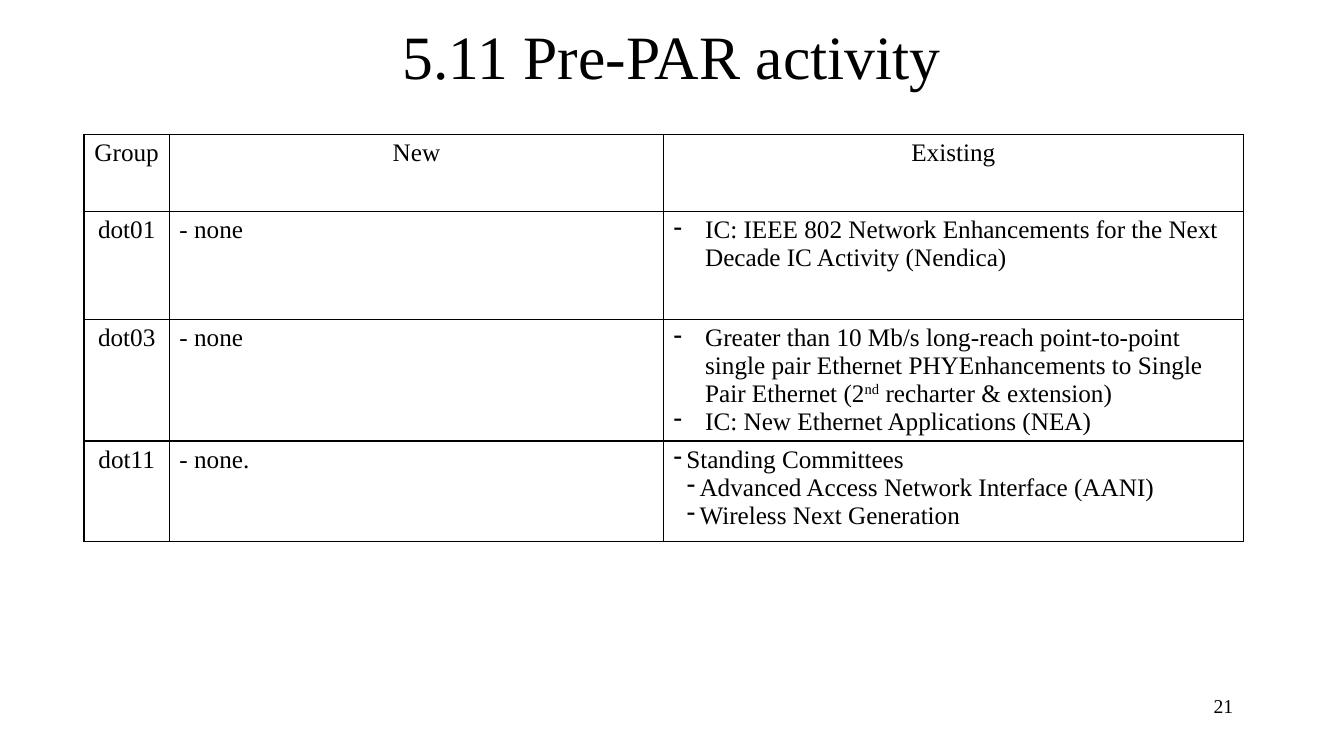
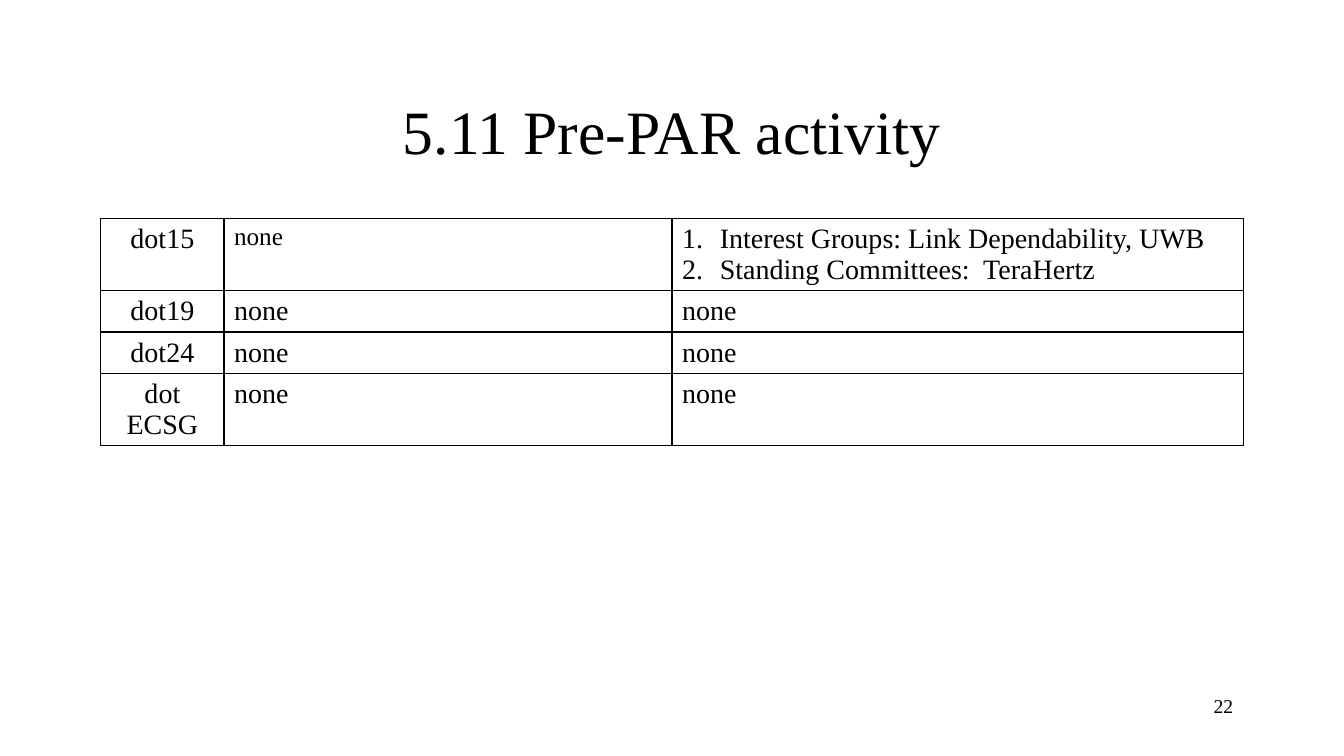
"""Build two slides that list pre-PAR activity by group in bordered tables."""
from lxml import etree
from pptx import Presentation
from pptx.dml.color import RGBColor
from pptx.enum.text import MSO_ANCHOR, PP_ALIGN
from pptx.oxml.ns import qn
from pptx.util import Pt

CENTER, LEFT, RIGHT = PP_ALIGN.CENTER, PP_ALIGN.LEFT, PP_ALIGN.RIGHT
MIDDLE = MSO_ANCHOR.MIDDLE
BLACK = RGBColor(0, 0, 0)
FONT = "Times New Roman"
TITLE_ONLY = 5
TITLE = "5.11 Pre-PAR activity"
TITLE_SIZE, NUMBER_SIZE = 44, 14
NUMBER_BOX = (688, 492, 200, 36)
BORDER_WIDTH = 1

# style name: (level, indent, bullet tag, bullet attributes)
LIST_STYLES = {
    "dash": (0, 22.5, "a:buChar", {"char": "-"}),
    "tight dash": (0, 9, "a:buChar", {"char": "-"}),
    "sub dash": (1, 9, "a:buChar", {"char": "-"}),
    "number": (0, 27, "a:buAutoNum", {"type": "arabicPeriod"}),
}
LEVEL_STEP = 9.5

# A cell is a text, or a list of (style, text); text between ^ marks is raised.
SLIDES = [
    {
        "number": "21",
        "title_box": (174, 12, 612, 54),
        "table_at": (60, 96),
        "columns": (61, 353, 414),
        "heights": (55, 77, 87, 72),
        "size": 18,
        "header": True,
        "rows": [
            ("Group", "New", "Existing"),
            ("dot01", "- none", [
                ("dash", "IC: IEEE 802 Network Enhancements for the Next "
                         "Decade IC Activity (Nendica)"),
            ]),
            ("dot03", "- none", [
                ("dash", "Greater than 10 Mb/s long-reach point-to-point single pair "
                         "Ethernet PHYEnhancements to Single Pair Ethernet "
                         "(2^nd^ recharter & extension)"),
                ("dash", "IC: New Ethernet Applications (NEA)"),
            ]),
            ("dot11", "- none.", [
                ("tight dash", "Standing Committees"),
                ("sub dash", "Advanced Access Network Interface (AANI)"),
                ("sub dash", "Wireless Next Generation"),
            ]),
        ],
    },
    {
        "number": "22",
        "title_box": (72, 48, 816, 90),
        "table_at": (72, 156),
        "columns": (88, 320, 408),
        "heights": (51.5, 29.5, 29.5, 51.5),
        "size": 20,
        "small_cells": {(0, 1): 18},
        "rows": [
            ("dot15", "none", [
                ("number", "Interest Groups: Link Dependability, UWB"),
                ("number", "Standing Committees:  TeraHertz"),
            ]),
            ("dot19", "none", "none"),
            ("dot24", "none", "none"),
            ("dot\vECSG", "none", "none"),
        ],
    },
]


def points(values):
    return [Pt(value) for value in values]


def format_paragraph(paragraph, size, alignment):
    paragraph.alignment = alignment
    paragraph.font.name = FONT
    paragraph.font.size = Pt(size)
    paragraph.font.color.rgb = BLACK


def add_bullet(paragraph, style):
    level, indent, tag, attributes = LIST_STYLES[style]
    paragraph.level = level
    properties = paragraph._p.get_or_add_pPr()
    properties.set("marL", str(Pt(indent + level * LEVEL_STEP)))
    properties.set("indent", str(-Pt(indent)))
    etree.SubElement(properties, qn("a:buFontTx"))
    etree.SubElement(properties, qn(tag), attributes)


def write_text(paragraph, text):
    first, *others = text.split("^")
    paragraph.text = first
    for index, part in enumerate(others):
        run = paragraph.add_run()
        run.text = part
        if index % 2 == 0:
            run._r.get_or_add_rPr().set("baseline", "30000")


def add_borders(cell):
    properties = cell._tc.get_or_add_tcPr()
    for index, side in enumerate(("lnL", "lnR", "lnT", "lnB")):
        line = etree.Element(qn(f"a:{side}"), w=str(Pt(BORDER_WIDTH)))
        fill = etree.SubElement(line, qn("a:solidFill"))
        etree.SubElement(fill, qn("a:srgbClr"), val=str(BLACK))
        properties.insert(index, line)


def fill_cell(cell, content, size, alignment):
    cell.fill.background()
    add_borders(cell)
    lines = [(None, content)] if isinstance(content, str) else content
    frame = cell.text_frame
    for index, (style, text) in enumerate(lines):
        paragraph = frame.add_paragraph() if index else frame.paragraphs[0]
        write_text(paragraph, text)
        if style:
            add_bullet(paragraph, style)
        format_paragraph(paragraph, size, alignment)


def add_activity_table(slide, data):
    rows, columns, heights = data["rows"], data["columns"], data["heights"]
    box = (*data["table_at"], sum(columns), sum(heights))
    table = slide.shapes.add_table(len(rows), len(columns), *points(box)).table
    table.first_row = table.horz_banding = False
    for column, width in zip(table.columns, columns):
        column.width = Pt(width)
    for row, height in zip(table.rows, heights):
        row.height = Pt(height)
    for row_index, row in enumerate(rows):
        is_header = data.get("header", False) and row_index == 0
        for column_index, content in enumerate(row):
            size = data.get("small_cells", {}).get((row_index, column_index), data["size"])
            alignment = CENTER if is_header or column_index == 0 else LEFT
            fill_cell(table.cell(row_index, column_index), content, size, alignment)


def add_title(slide, box):
    title = slide.shapes.title
    title.left, title.top, title.width, title.height = points(box)
    title.text_frame.text = TITLE
    title.text_frame.vertical_anchor = MIDDLE
    format_paragraph(title.text_frame.paragraphs[0], TITLE_SIZE, CENTER)


def add_number(slide, number):
    frame = slide.shapes.add_textbox(*points(NUMBER_BOX)).text_frame
    frame.word_wrap = True
    frame.text = number
    format_paragraph(frame.paragraphs[0], NUMBER_SIZE, RIGHT)


def main():
    presentation = Presentation()
    presentation.slide_width, presentation.slide_height = points((960, 540))
    for data in SLIDES:
        slide = presentation.slides.add_slide(presentation.slide_layouts[TITLE_ONLY])
        add_title(slide, data["title_box"])
        add_activity_table(slide, data)
        add_number(slide, data["number"])
    presentation.save("out.pptx")


if __name__ == "__main__":
    main()
